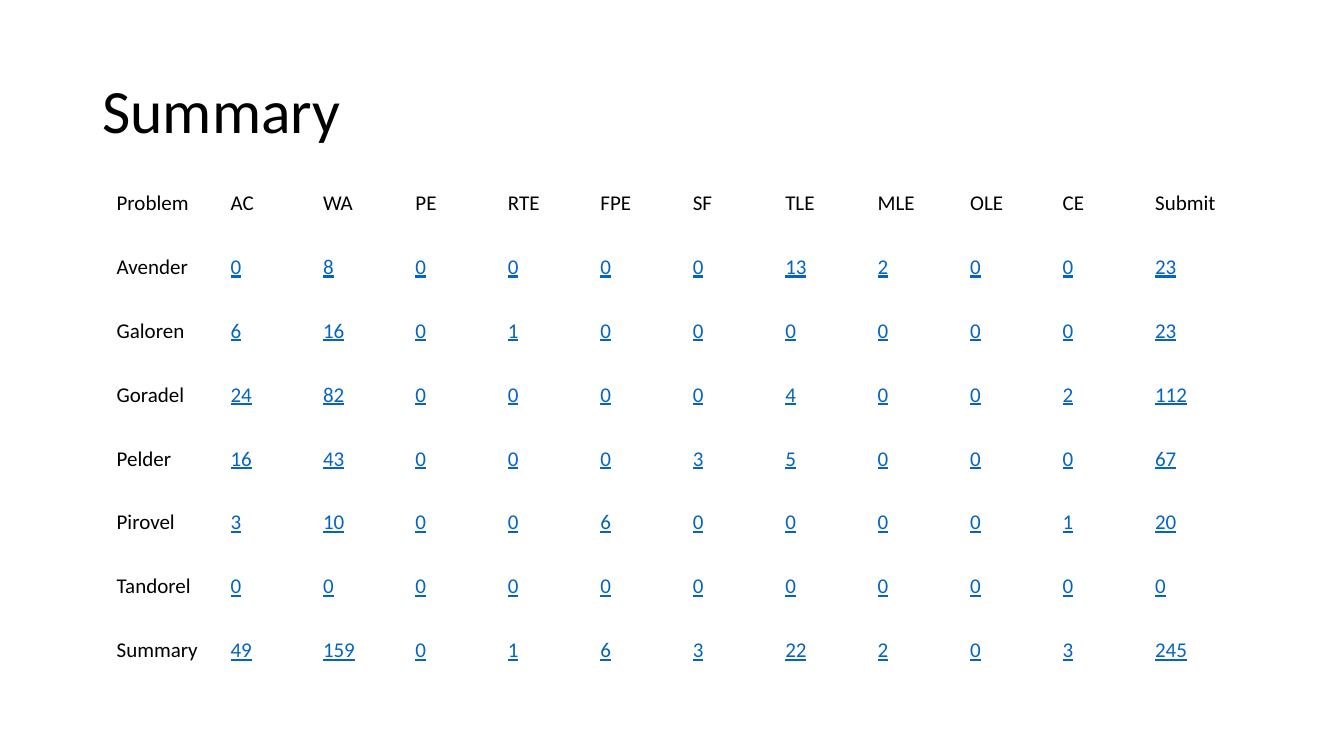
from pptx import Presentation
from pptx.dml.color import RGBColor
from pptx.enum.text import MSO_ANCHOR
from pptx.util import Cm, Pt

MIDDLE = MSO_ANCHOR.MIDDLE
FONT = "Calibri"
BLACK = "000000"
LINK_BLUE = "0563C1"

RESULTS = [
    ("Problem", "AC", "WA", "PE", "RTE", "FPE", "SF", "TLE", "MLE", "OLE", "CE", "Submit"),
    ("Avender", 0, 8, 0, 0, 0, 0, 13, 2, 0, 0, 23),
    ("Galoren", 6, 16, 0, 1, 0, 0, 0, 0, 0, 0, 23),
    ("Goradel", 24, 82, 0, 0, 0, 0, 4, 0, 0, 2, 112),
    ("Pelder", 16, 43, 0, 0, 0, 3, 5, 0, 0, 0, 67),
    ("Pirovel", 3, 10, 0, 0, 6, 0, 0, 0, 0, 1, 20),
    ("Tandorel", 0, 0, 0, 0, 0, 0, 0, 0, 0, 0, 0),
    ("Summary", 49, 159, 0, 1, 6, 3, 22, 2, 0, 3, 245),
]
NAME_WIDTH, COUNT_WIDTH, ROW_HEIGHT = Cm(2.87), Cm(2.33), Cm(1.61)


def rgb(color):
    """Turn a hex string into a colour."""
    return RGBColor.from_string(color)


def write(tf, text, size, color=BLACK, underline=False):
    """Set the text of a frame and format its run."""
    tf.text = text
    p = tf.paragraphs[0]
    font = p.runs[0].font
    font.name, font.size, font.underline = FONT, Pt(size), underline
    font.color.rgb = rgb(color)
    return p


def add_title(s, text):
    """Add the slide title."""
    sp = s.shapes.add_textbox(Cm(2.33), Cm(1.01), Cm(29.21), Cm(3.68))
    tf = sp.text_frame
    tf.word_wrap = True
    tf.vertical_anchor = MIDDLE
    write(tf, text, 44).line_spacing = 0.9


def fill_cell(cell, value):
    """Write one cell, with counts in underlined blue."""
    cell.fill.background()
    cell.vertical_anchor = MIDDLE
    cell.margin_left = cell.margin_right = Cm(0.2)
    cell.margin_top = cell.margin_bottom = Cm(0.1)
    is_count = isinstance(value, int)
    write(cell.text_frame, str(value), 15, LINK_BLUE if is_count else BLACK, is_count)


def add_results(s, rows):
    """Add the table of results per problem."""
    n_rows, n_cols = len(rows), len(rows[0])
    width = NAME_WIDTH + COUNT_WIDTH * (n_cols - 1)
    frame = s.shapes.add_table(n_rows, n_cols, Cm(2.74), Cm(4.32), width, ROW_HEIGHT * n_rows)
    table = frame.table
    table.first_row = table.horz_banding = False
    for i, column in enumerate(table.columns):
        column.width = COUNT_WIDTH if i else NAME_WIDTH
    for row, values in zip(table.rows, rows):
        row.height = ROW_HEIGHT
        for cell, value in zip(row.cells, values):
            fill_cell(cell, value)


def main():
    """Build the summary slide."""
    prs = Presentation()
    prs.slide_width, prs.slide_height = Cm(33.87), Cm(19.05)
    s = prs.slides.add_slide(prs.slide_layouts[6])
    add_title(s, "Summary")
    add_results(s, RESULTS)
    prs.save("out.pptx")


if __name__ == "__main__":
    main()
